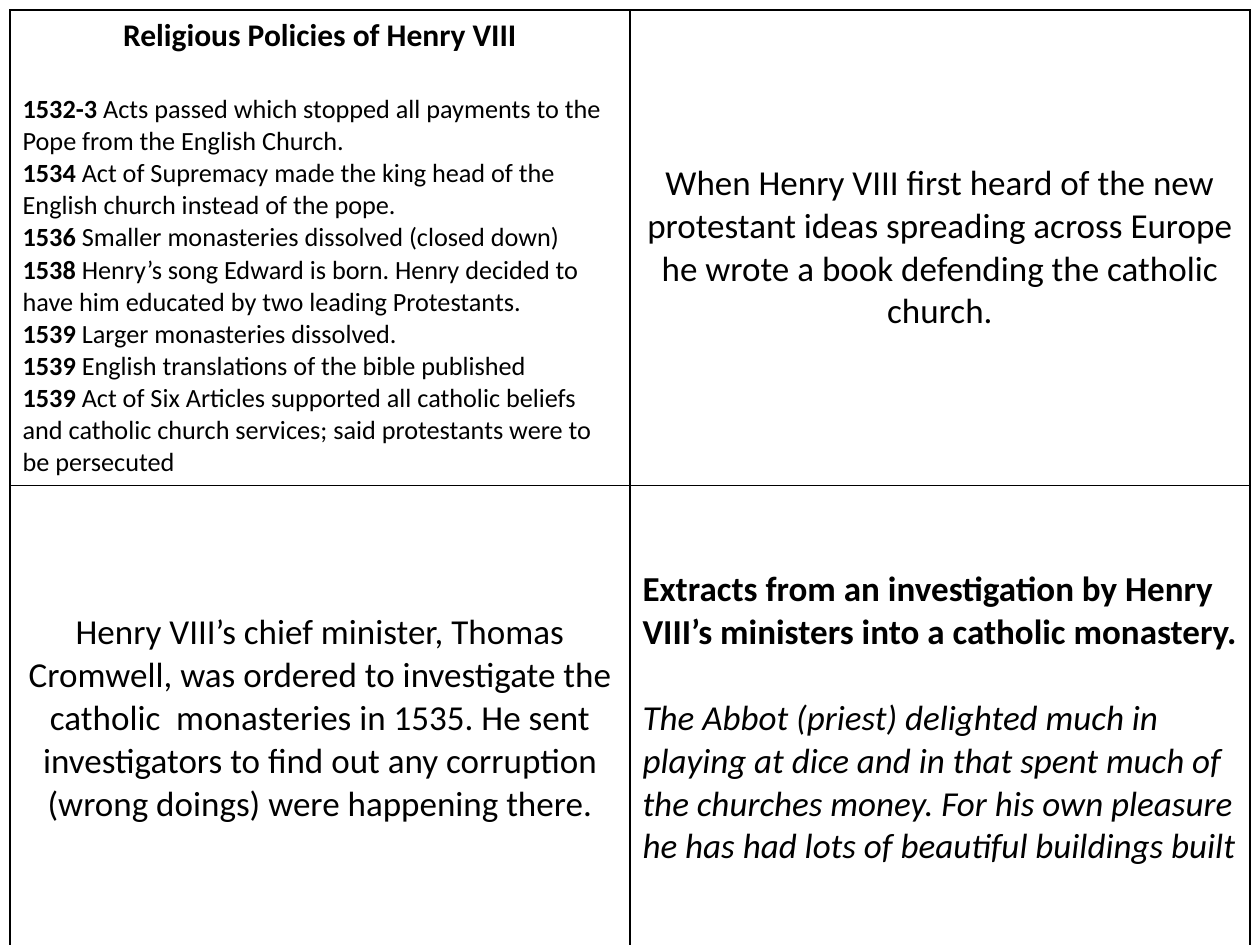
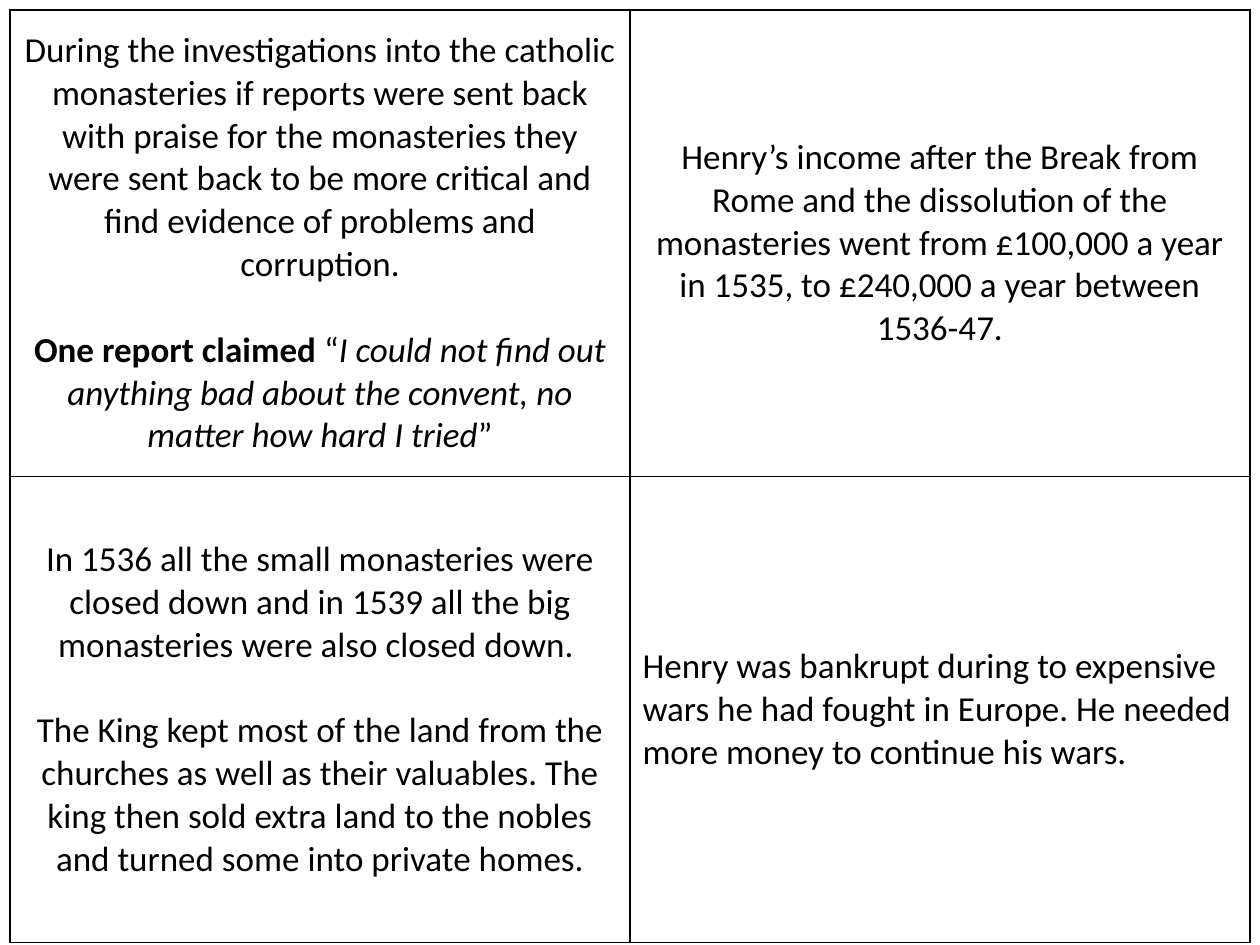
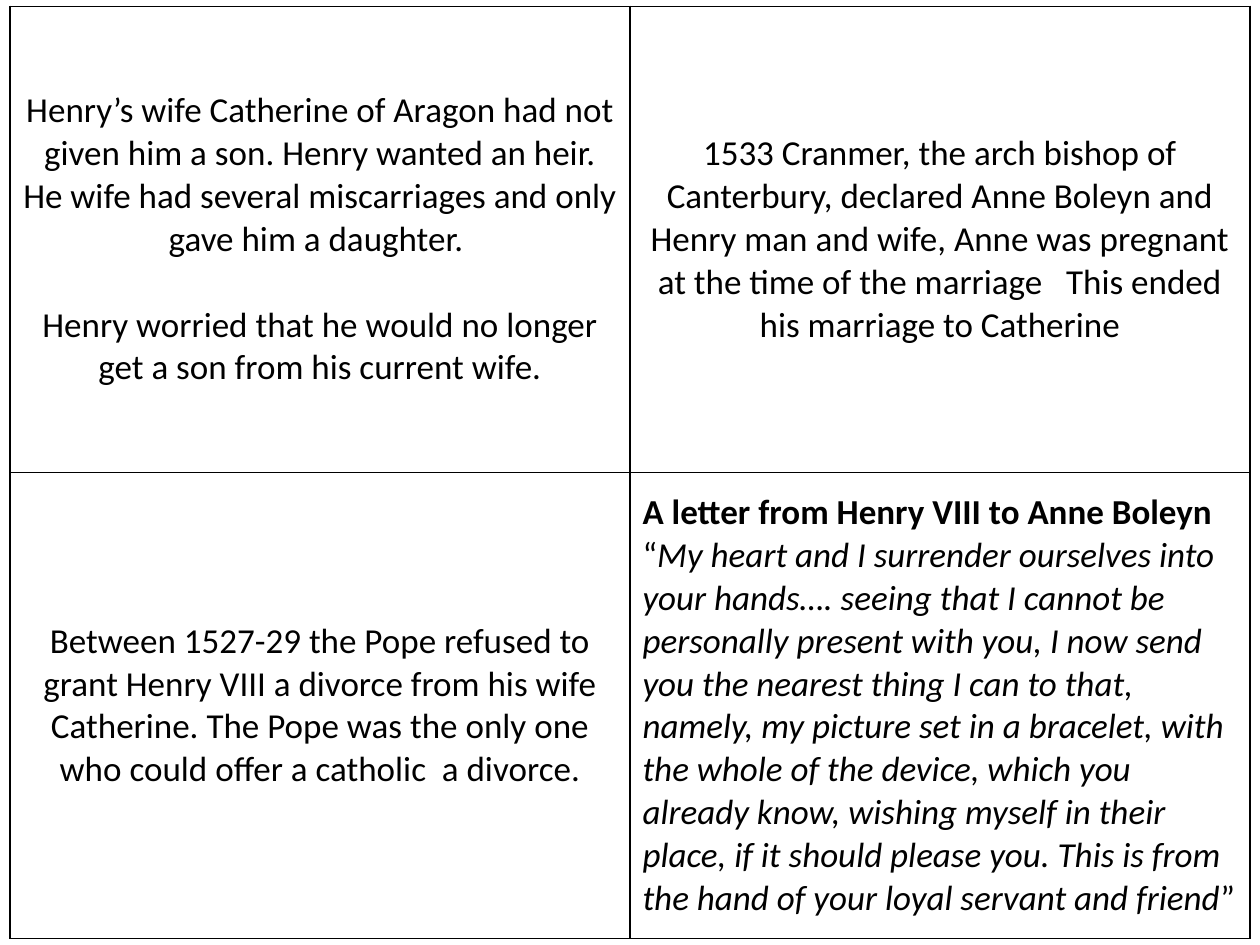
from itertools import product

from lxml import etree
from pptx import Presentation
from pptx.dml.color import RGBColor
from pptx.enum.text import MSO_ANCHOR, PP_ALIGN
from pptx.oxml.ns import qn
from pptx.util import Inches, Pt

CENTER, LEFT = PP_ALIGN.CENTER, PP_ALIGN.LEFT
MIDDLE, TOP = MSO_ANCHOR.MIDDLE, MSO_ANCHOR.TOP
FONT = "Calibri"
INK = "000000"
LINE_HEIGHT = 1.22
BOLD, ITALIC, PLAIN = "bold", "italic", "plain"
GRID_LEFT, CARD_WIDTH, CARD_HEIGHT = 0.08, 4.92, 3.7

POLICIES = [
    ("1532-3", "Acts passed which stopped all payments to the Pope from the English Church."),
    ("1534", "Act of Supremacy made the king head of the English church instead of the pope."),
    ("1536", "Smaller monasteries dissolved (closed down)"),
    ("1538", "Henry’s song Edward is born. Henry decided to have him educated by two leading Protestants."),
    ("1539", "Larger monasteries dissolved."),
    ("1539", "English translations of the bible published"),
    ("1539", "Act of Six Articles supported all catholic beliefs and catholic church services; "
             "said protestants were to be persecuted"),
]


def colour(hex_value):
    """Turn a hex string into a colour."""
    return RGBColor.from_string(hex_value)


def write(frame, runs, size=20, align=CENTER, gap_lines=0):
    """Add one paragraph of (text, style) runs, or of one plain string."""
    first = not frame.paragraphs[0].runs
    paragraph = frame.paragraphs[0] if first else frame.add_paragraph()
    paragraph.alignment = align
    paragraph.space_after = Pt(round(size * LINE_HEIGHT * gap_lines, 1))
    for text, style in [(runs, PLAIN)] if isinstance(runs, str) else runs:
        run = paragraph.add_run()
        run.text = text
        run.font.name = FONT
        run.font.size = Pt(size)
        run.font.bold = style == BOLD
        run.font.italic = style == ITALIC
        run.font.color.rgb = colour(INK)


def outline(cell):
    """Draw a thin line on all four sides of a cell."""
    properties = cell._tc.get_or_add_tcPr()
    for position, side in enumerate(("lnL", "lnR", "lnT", "lnB")):
        line = etree.Element(qn(f"a:{side}"), w=str(Pt(1)))
        fill = etree.SubElement(line, qn("a:solidFill"))
        etree.SubElement(fill, qn("a:srgbClr"), val=INK)
        properties.insert(position, line)


def policies_card(cell):
    """Fill a card with the dated list of religious policies."""
    cell.vertical_anchor = TOP
    write(cell.text_frame, [("Religious Policies of Henry VIII", BOLD)], size=18, gap_lines=1)
    for year, policy in POLICIES:
        write(cell.text_frame, [(year, BOLD), (f" {policy}", PLAIN)], size=15, align=LEFT)


def fact_card(*paragraphs, align=CENTER, gap_lines=1):
    """Return a filler that writes paragraphs with gaps between them."""
    def fill(cell):
        """Write the paragraphs into a card."""
        for number, runs in enumerate(paragraphs, 1):
            write(cell.text_frame, runs, align=align,
                  gap_lines=gap_lines if number < len(paragraphs) else 0)
    return fill


def card_slide(deck, cards, top=0.08):
    """Add a slide with a two by two grid of cards."""
    slide = deck.slides.add_slide(deck.slide_layouts[6])
    grid = slide.shapes.add_table(2, 2, Inches(GRID_LEFT), Inches(top),
                                  Inches(2 * CARD_WIDTH), Inches(2 * CARD_HEIGHT)).table
    grid.first_row = grid.horz_banding = False
    for (row, column), fill_card in zip(product(range(2), repeat=2), cards):
        cell = grid.cell(row, column)
        cell.fill.background()
        cell.vertical_anchor = MIDDLE
        outline(cell)
        fill_card(cell)


def main():
    """Build the three card slides and save them."""
    deck = Presentation()
    deck.slide_width, deck.slide_height = Inches(10), Inches(7.5)
    card_slide(deck, [
        policies_card,
        fact_card("When Henry VIII first heard of the new protestant ideas spreading across Europe "
                  "he wrote a book defending the catholic church."),
        fact_card("Henry VIII’s chief minister, Thomas Cromwell, was ordered to investigate the "
                  "catholic  monasteries in 1535. He sent investigators to find out any corruption "
                  "(wrong doings) were happening there."),
        fact_card(
            [("Extracts from an investigation by Henry VIII’s ministers into a catholic monastery.", BOLD)],
            [("The Abbot (priest) delighted much in playing at dice and in that spent much of the "
              "churches money. For his own pleasure he has had lots of beautiful buildings built", ITALIC)],
            align=LEFT),
    ])
    card_slide(deck, [
        fact_card(
            "During the investigations into the catholic monasteries if reports were sent back with "
            "praise for the monasteries they were sent back to be more critical and find evidence of "
            "problems and corruption.",
            [("One report claimed ", BOLD), ("“", PLAIN),
             ("I could not find out anything bad about the convent, no matter how hard I tried", ITALIC),
             ("”", PLAIN)]),
        fact_card("Henry’s income after the Break from Rome and the dissolution of the monasteries "
                  "went from £100,000 a year in 1535, to £240,000 a year between 1536-47."),
        fact_card(
            "In 1536 all the small monasteries were closed down and in 1539 all the big monasteries "
            "were also closed down. ",
            "The King kept most of the land from the churches as well as their valuables. The king "
            "then sold extra land to the nobles and turned some into private homes."),
        fact_card("Henry was bankrupt during to expensive wars he had fought in Europe. He needed "
                  "more money to continue his wars.", align=LEFT),
    ])
    card_slide(deck, [
        fact_card(
            "Henry’s wife Catherine of Aragon had not given him a son. Henry wanted an heir. He wife "
            "had several miscarriages and only gave him a daughter. ",
            "Henry worried that he would no longer get a son from his current wife."),
        fact_card("1533 Cranmer, the arch bishop of Canterbury, declared Anne Boleyn and Henry man "
                  "and wife, Anne was pregnant at the time of the marriage   This ended his marriage "
                  "to Catherine"),
        fact_card("Between 1527-29 the Pope refused to grant Henry VIII a divorce from his wife "
                  "Catherine. The Pope was the only one who could offer a catholic  a divorce."),
        fact_card(
            [("A letter from Henry VIII to Anne Boleyn", BOLD)],
            [("“", PLAIN),
             ("My heart and I surrender ourselves into your hands…. seeing that I cannot be "
              "personally present with you, I now send you the nearest thing I can to that, namely, "
              "my picture set in a bracelet, with the whole of the device, which you already know, "
              "wishing myself in their place, if it should please you. This is from the hand of your "
              "loyal servant and friend", ITALIC),
             ("”", PLAIN)],
            align=LEFT, gap_lines=0),
    ], top=0.05)
    deck.save("out.pptx")


if __name__ == "__main__":
    main()
